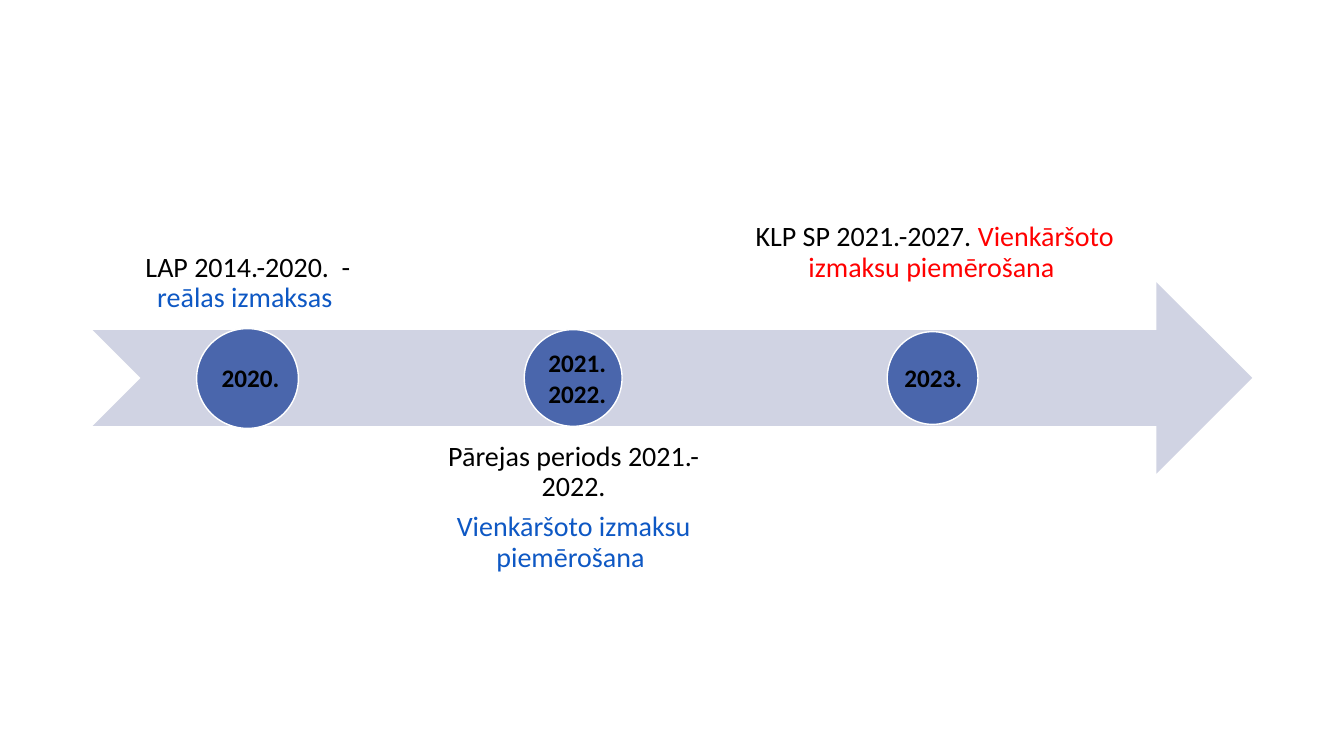
import pptx
import pptx.util
from pptx.dml.color import RGBColor
from pptx.enum.shapes import MSO_SHAPE
from pptx.enum.text import MSO_ANCHOR, PP_ALIGN
from pptx.util import Inches

COLORS = {
    "band": "D0D3E3",
    "marker": "4A66AC",
    "outline": "FFFFFF",
    "text": "000000",
    "blue": "0E58C4",
    "red": "FF0000",
}
FONT = "Calibri"


def rgb(name):
    return RGBColor.from_string(COLORS[name])


def add_filled_shape(slide, kind, box, fill, outline=None):
    shape = slide.shapes.add_shape(kind, *map(Inches, box))
    shape.shadow.inherit = False
    shape.fill.solid()
    shape.fill.fore_color.rgb = rgb(fill)
    if outline:
        shape.line.color.rgb = rgb(outline)
        shape.line.width = pptx.util.Pt(1)
    else:
        shape.line.fill.background()


def add_text(slide, box, paragraphs, size, bold=False):
    """Each paragraph is a list of (text, color) runs."""
    frame = slide.shapes.add_textbox(*map(Inches, box)).text_frame
    frame.word_wrap = True
    for index, runs in enumerate(paragraphs):
        paragraph = frame.paragraphs[0] if index == 0 else frame.add_paragraph()
        paragraph.font.name = FONT
        paragraph.font.size = pptx.util.Pt(size)
        paragraph.font.bold = bold
        for text, color in runs:
            run = paragraph.add_run()
            run.text = text
            run.font.color.rgb = rgb(color)
    return frame


def add_period(slide, box, paragraphs, anchor):
    period = add_text(slide, box, paragraphs, 20)
    period.vertical_anchor = anchor
    period.margin_left = period.margin_right = Inches(0.16)
    period.margin_top = period.margin_bottom = Inches(0.16)
    for paragraph in period.paragraphs:
        paragraph.alignment = PP_ALIGN.CENTER
        paragraph.line_spacing = 0.9
        paragraph.space_after = pptx.util.Pt(7)


def add_milestone(slide, circle, label, years):
    add_filled_shape(slide, MSO_SHAPE.OVAL, circle, "marker", "outline")
    year_lines = [[(year, "text")] for year in years]
    frame = add_text(slide, label, year_lines, 18, bold=True)
    frame.word_wrap = len(years[0]) > 5


def main():
    deck = pptx.Presentation()
    deck.slide_width, deck.slide_height = Inches(13.33), Inches(7.5)
    slide = deck.slides.add_slide(deck.slide_layouts[6])

    # Timeline arrow
    add_filled_shape(slide, MSO_SHAPE.NOTCHED_RIGHT_ARROW,
                     (0.92, 2.8, 11.5, 1.9), "band")

    # Planning periods
    add_period(slide, (0.92, 1.37, 3.08, 1.9),
               [[("LAP 2014.-2020.  - ", "text"), ("reālas izmaksas ", "blue")]],
               MSO_ANCHOR.BOTTOM)
    add_period(slide, (4.15, 4.23, 3.08, 1.9),
               [[("Pārejas periods 2021.-2022.", "text")],
                [("Vienkāršoto izmaksu piemērošana ", "blue")]],
               MSO_ANCHOR.TOP)
    add_period(slide, (7.33, 1.77, 3.88, 1.2),
               [[("KLP SP 2021.-2027.", "text"),
                 (" Vienkāršoto izmaksu piemērošana ", "red")]],
               MSO_ANCHOR.BOTTOM)

    # Year markers
    add_milestone(slide, (1.95, 3.26, 1.01, 0.99), (2.1, 3.55, 0.9, 0.4), ["2020."])
    add_milestone(slide, (5.2, 3.27, 0.97, 0.96), (5.34, 3.4, 0.78, 0.71),
                  ["2021.", "2022."])
    add_milestone(slide, (8.8, 3.29, 0.9, 0.92), (8.87, 3.55, 0.78, 0.4), ["2023."])

    deck.save("out.pptx")


if __name__ == "__main__":
    main()
